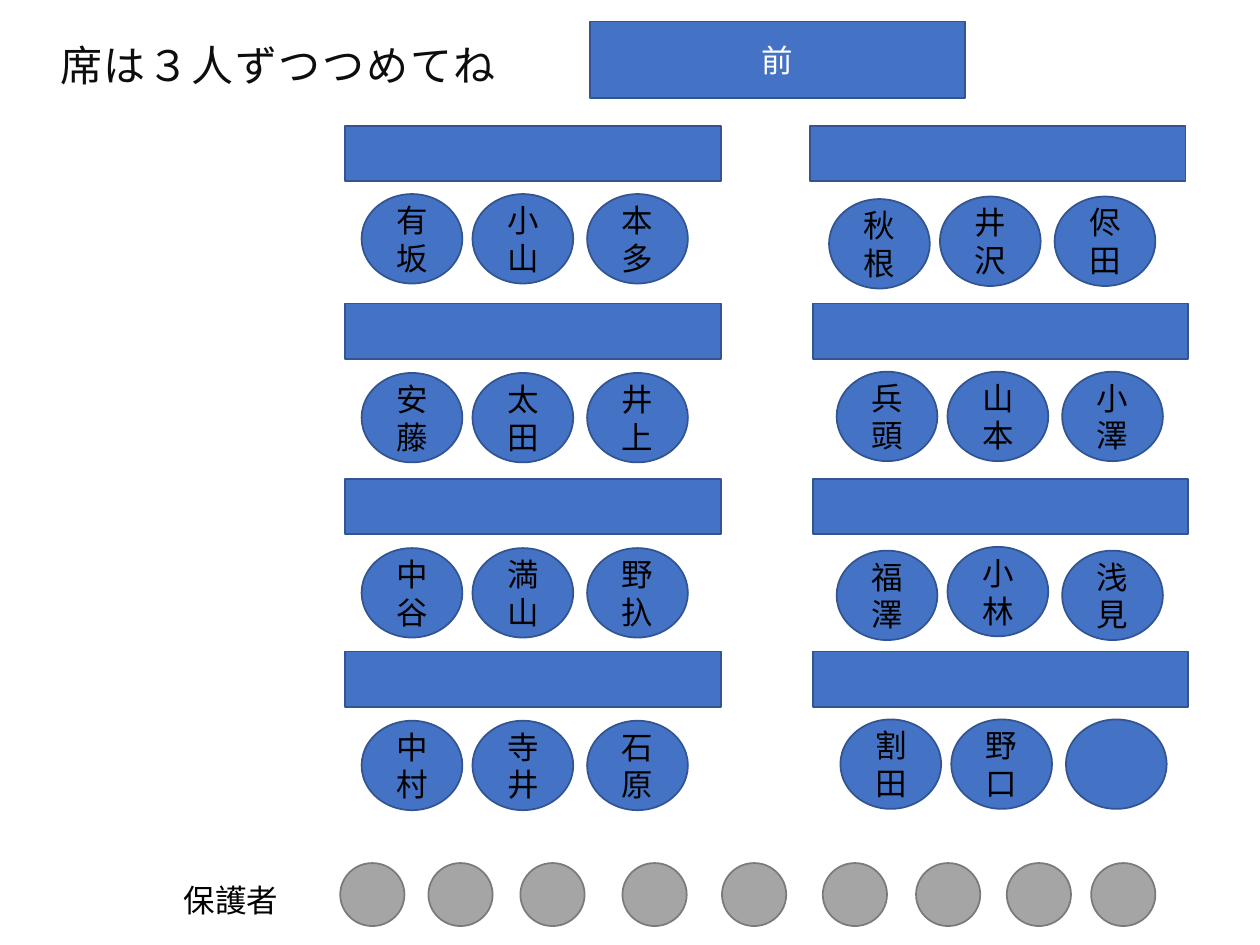
from dataclasses import dataclass

from pptx import Presentation
from pptx import util as u
from pptx.dml.color import RGBColor
from pptx.enum import shapes, text

COLUMNS, ROWS = 1000, 750
CELL = u.Inches(0.01)

DESK_SIZE = (298, 44)
SEAT_SIZE = (80, 71)
SEAT_STEPS = (0, 88, 179)
LEVEL = (0, 0, 0)

# desk column, desk row, first seat column, seat row, drop of each seat, names
BENCHES = (
    (274, 100, 287, 154, LEVEL, ("有坂", "小山", "本多")),
    (643, 100, 658, 156, (2, 0, 0), ("秋根", "井沢", "侭田")),
    (274, 241, 287, 296, LEVEL, ("安藤", "太田", "井上")),
    (645, 241, 664, 295, LEVEL, ("兵頭", "山本", "小澤")),
    (274, 380, 287, 435, LEVEL, ("中谷", "満山", "野扖")),
    (645, 380, 664, 434, (3, 0, 3), ("福澤", "小林", "浅見")),
    (274, 517, 287, 572, LEVEL, ("中村", "寺井", "石原")),
    (645, 517, 667, 571, LEVEL, ("割田", "野口", "")),
)
GUARDIAN_COLUMNS = (270, 340, 413, 494, 573, 653, 727, 799, 866)
GUARDIAN_ROW = 685


@dataclass(frozen=True)
class Theme:
    font: str = "Calibri"
    title_size: int = 24
    label_size: int = 18
    title: str = "0D0D0D"
    dark: str = "000000"
    light: str = "FFFFFF"
    blue: tuple = ("4472C4", "325491")
    gray: tuple = ("A5A5A5", "7A7A7A")


THEME = Theme()
RECTANGLE = shapes.MSO_SHAPE.RECTANGLE
OVAL = shapes.MSO_SHAPE.OVAL


def on_grid(*cells):
    return [cell * CELL for cell in cells]


def write(frame, words, size, color, **paragraph_format):
    paragraph = frame.paragraphs[0]
    for name, value in paragraph_format.items():
        setattr(paragraph, name, value)
    run = paragraph.add_run()
    run.text = words
    for name, value in {"name": THEME.font, "size": u.Pt(size)}.items():
        setattr(run.font, name, value)
    run.font.color.rgb = RGBColor.from_string(color)
    return run


def add_block(slide, kind, place, size, colors, label="", label_color=THEME.dark):
    """Add a filled, outlined shape with an optional centred label."""
    shape = slide.shapes.add_shape(kind, *on_grid(*place, *size))
    shape.shadow.inherit = False
    fill, line = colors
    shape.fill.solid()
    shape.fill.fore_color.rgb = RGBColor.from_string(fill)
    shape.line.color.rgb = RGBColor.from_string(line)
    shape.line.width = u.Pt(1)
    if label:
        shape.text_frame.vertical_anchor = text.MSO_ANCHOR.MIDDLE
        write(shape.text_frame, label, THEME.label_size, label_color,
              alignment=text.PP_ALIGN.CENTER)


def add_text(slide, place, size, words, points, color, wrap, **paragraph_format):
    box = slide.shapes.add_textbox(*on_grid(*place, *size))
    box.text_frame.word_wrap = wrap
    return write(box.text_frame, words, points, color, **paragraph_format)


def add_bench(slide, desk_column, desk_row, seat_column, seat_row, drops, names):
    add_block(slide, RECTANGLE, (desk_column, desk_row), DESK_SIZE, THEME.blue)
    for step, drop, name in zip(SEAT_STEPS, drops, names):
        place = (seat_column + step, seat_row + drop)
        add_block(slide, OVAL, place, SEAT_SIZE, THEME.blue, name)


def add_guardians(slide):
    for column in GUARDIAN_COLUMNS:
        add_block(slide, OVAL, (column, GUARDIAN_ROW), (51, 50), THEME.gray)
    add_text(slide, (136, 694), (96, 40), "保護者",
             THEME.label_size, THEME.dark, wrap=False)


def main():
    presentation = Presentation()
    presentation.slide_width, presentation.slide_height = on_grid(COLUMNS, ROWS)
    slide = presentation.slides.add_slide(presentation.slide_layouts[6])

    title = add_text(slide, (38, 34), (797, 164), "席は３人ずつつめてね",
                     THEME.title_size, THEME.title, wrap=True, line_spacing=0.8)
    title.font._element.set("spc", "100")
    add_block(slide, RECTANGLE, (468, 17), (298, 61), THEME.blue, "前", THEME.light)
    for bench in BENCHES:
        add_bench(slide, *bench)
    add_guardians(slide)

    presentation.save("out.pptx")


if __name__ == "__main__":
    main()
